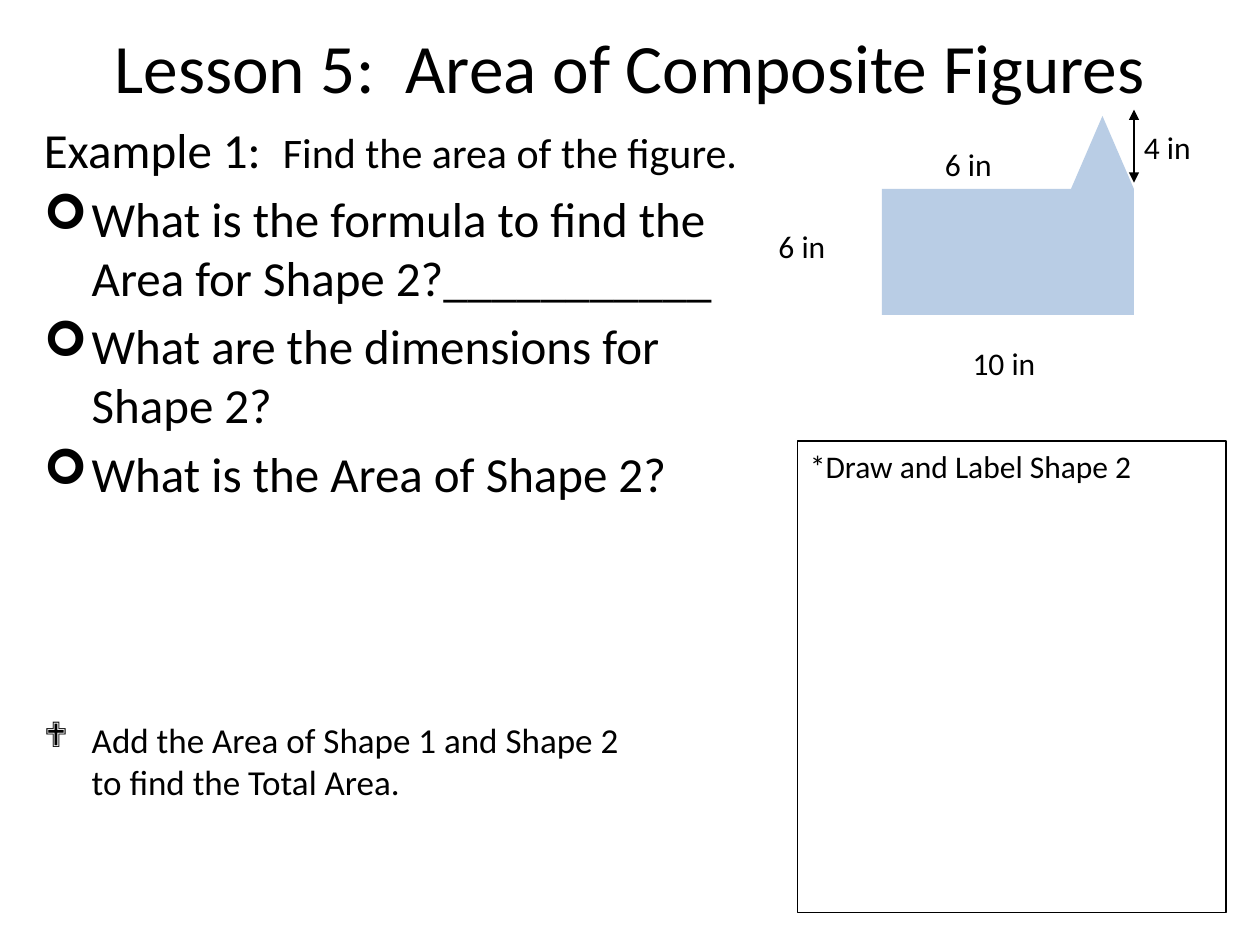
from lxml import etree
from pptx import Presentation
from pptx.dml.color import RGBColor
from pptx.enum.shapes import MSO_CONNECTOR as CONNECTOR, MSO_SHAPE as SHAPE
from pptx.enum.text import MSO_ANCHOR as ANCHOR, PP_ALIGN as ALIGN
from pptx.oxml.ns import qn
from pptx.util import Inches, Pt

FONT = "Calibri"
BLACK = "000000"
BLUE = "B9CDE5"


def color(hex_value):
    return RGBColor.from_string(hex_value)


def format_runs(p, size):
    for r in p.runs:
        r.font.name = FONT
        r.font.size = Pt(size)
        r.font.color.rgb = color(BLACK)


def add_text(s, text, x, y, w, h, size):
    sp = s.shapes.add_textbox(Inches(x), Inches(y), Inches(w), Inches(h))
    tf = sp.text_frame
    tf.word_wrap = True
    tf.text = text
    format_runs(tf.paragraphs[0], size)
    return sp


def add_bullet(tf, char, text, size, before):
    p = tf.add_paragraph()
    p.text = text
    p.space_before = Pt(before)
    format_runs(p, size)
    pPr = p._p.get_or_add_pPr()
    pPr.set("marL", str(Inches(0.38)))
    pPr.set("indent", str(Inches(-0.38)))
    etree.SubElement(pPr, qn("a:buFont")).set("typeface", "Wingdings")
    etree.SubElement(pPr, qn("a:buChar")).set("char", char)


def add_figure(s, kind, x, y, w, h):
    sp = s.shapes.add_shape(kind, Inches(x), Inches(y), Inches(w), Inches(h))
    sp.shadow.inherit = False
    sp.fill.solid()
    sp.fill.fore_color.rgb = color(BLUE)
    sp.line.fill.background()


def add_double_arrow(s, x1, y1, x2, y2):
    line = s.shapes.add_connector(
        CONNECTOR.STRAIGHT, Inches(x1), Inches(y1), Inches(x2), Inches(y2))
    line.line.color.rgb = color(BLACK)
    line.line.width = Pt(0.75)
    ln = line.line._get_or_add_ln()
    for end in ("a:headEnd", "a:tailEnd"):
        etree.SubElement(ln, qn(end)).set("type", "triangle")
    etree.SubElement(line._element.spPr, qn("a:effectLst"))


def add_questions(s):
    tf = add_text(s, "Example 1:  ", 0.25, 0.9, 5.83, 6.52, 28).text_frame
    p = tf.paragraphs[0]
    r = p.add_run()
    r.text = "Find the area of the figure."
    format_runs(p, 28)
    r.font.size = Pt(24)
    for question in (
        "What is the formula to find the Area for Shape 2?___________",
        "What are the dimensions for Shape 2?",
        "What is the Area of Shape 2?",
    ):
        add_bullet(tf, "➢", question, 28, 5.6)
    # The wide gap leaves room for the student's work
    add_bullet(tf, "❖", "Add the Area of Shape 1 and Shape 2\vto find the Total Area.",
               20, 123.4)


def main():
    prs = Presentation()
    prs.slide_width, prs.slide_height = Inches(10), Inches(7.5)
    s = prs.slides.add_slide(prs.slide_layouts[6])

    # Title
    title = add_text(s, "Lesson 5:  Area of Composite Figures", 0.5, 0.17, 9, 0.7, 39.6)
    title.text_frame.vertical_anchor = ANCHOR.MIDDLE
    title.text_frame.paragraphs[0].alignment = ALIGN.CENTER

    # Questions
    add_questions(s)

    # Composite figure with its dimensions
    add_figure(s, SHAPE.RECTANGLE, 7, 1.5, 2, 1)
    add_figure(s, SHAPE.ISOSCELES_TRIANGLE, 8.5, 0.92, 0.5, 0.58)
    for label, x, y in (("6 in", 6.08, 1.75), ("6 in", 7.4, 1.1),
                        ("10 in", 7.62, 2.68), ("4 in", 8.98, 0.97)):
        add_text(s, label, x, y, 0.75, 0.4, 18)
    add_double_arrow(s, 9, 0.87, 9, 1.45)

    # Drawing area
    box = add_text(s, "*Draw and Label Shape 2", 6.33, 3.5, 3.4, 3.74, 18)
    box.line.color.rgb = color(BLACK)
    box.line.width = Pt(0.75)

    prs.save("out.pptx")


if __name__ == "__main__":
    main()
